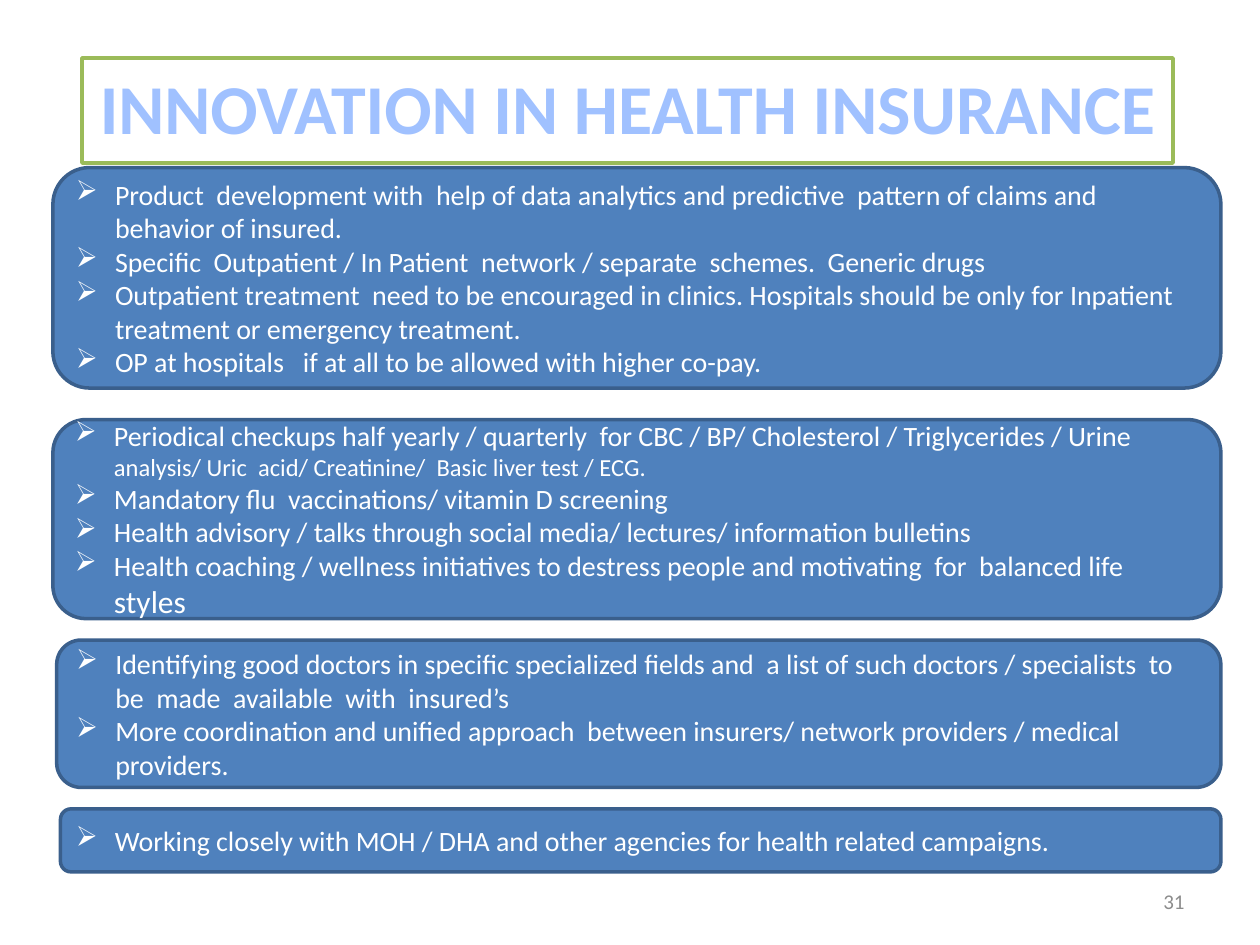
from lxml import etree
from pptx import Presentation
from pptx.dml.color import RGBColor
from pptx.enum import shapes, text
from pptx.oxml.ns import qn

PX = 9144  # EMU per px, 100 px to the inch
PT = 12700

THEME = {
    "font": "Calibri",
    "panel": "4F81BD", "edge": "3A5F8C",
    "box": "FFFFFF", "frame": "9BBB59",
    "title": "A0C1FF", "body": "FFFFFF", "number": "8C8C8C",
    "title_pt": 40, "body_pt": 16, "small_pt": 14, "large_pt": 18,
    "number_pt": 12, "line_pt": 2,
}
INDENT = 31
RIGHT = 969  # shared right edge of the panels

# Each panel: left, top, height, bullets; a bullet is a list of (text, size key)
PANELS = [
    (42, 133, 175, [
        [("Product  development with  help of data analytics and predictive  "
          "pattern of claims and behavior of insured.", "body_pt")],
        [("Specific  Outpatient / In Patient  network / separate  schemes.  "
          "Generic drugs", "body_pt")],
        [("Outpatient treatment  need to be encouraged in clinics. Hospitals "
          "should be only for Inpatient treatment or emergency treatment.",
          "body_pt")],
        [("OP at hospitals   if at all to be allowed with higher co-pay.",
          "body_pt")],
    ]),
    (42, 333, 158, [
        [("Periodical checkups half yearly / quarterly  for CBC / BP/ "
          "Cholesterol / Triglycerides / Urine ", "body_pt"),
         ("analysis/ Uric  acid/ Creatinine/  Basic liver test / ECG.",
          "small_pt")],
        [("Mandatory flu  vaccinations/ vitamin D screening", "body_pt")],
        [("Health advisory / talks through social media/ lectures/ "
          "information bulletins", "body_pt")],
        [("Health coaching / wellness initiatives to destress people and "
          "motivating  for  balanced life ", "body_pt"),
         ("styles", "large_pt")],
    ]),
    (45, 508, 117, [
        [("Identifying good doctors in specific specialized fields and  a list "
          "of such doctors / specialists  to be  made  available  with  "
          "insured’s", "body_pt")],
        [("More coordination and unified approach  between insurers/ network "
          "providers / medical providers.", "body_pt")],
    ]),
    (48, 642, 50, [
        [("Working closely with MOH / DHA and other agencies for health "
          "related campaigns.", "body_pt")],
    ]),
]


def assign(obj, values):
    for name, value in values.items():
        setattr(obj, name, value)


def place(left, top, width, height):
    return dict(left=left * PX, top=top * PX,
                width=width * PX, height=height * PX)


def paint(shape, fill, line):
    shape.fill.solid()
    shape.fill.fore_color.rgb = RGBColor.from_string(THEME[fill])
    shape.line.color.rgb = RGBColor.from_string(THEME[line])
    shape.line.width = THEME["line_pt"] * PT


def write(para, words, size, color, bold=False):
    run = para.add_run()
    run.text = words
    assign(run.font, dict(name=THEME["font"], size=THEME[size] * PT, bold=bold))
    run.font.color.rgb = RGBColor.from_string(THEME[color])


def bullet(para):
    props = para._p.get_or_add_pPr()
    props.set("marL", str(INDENT * PX))
    props.set("indent", str(-INDENT * PX))
    etree.SubElement(props, qn("a:buChar")).set("char", "➢")


def add_title(slide, words):
    title = slide.shapes.title
    assign(title, place(65, 46, 866, 77))
    paint(title, "box", "frame")
    frame = title.text_frame
    assign(frame, dict(word_wrap=False, vertical_anchor=text.MSO_ANCHOR.TOP,
                       auto_size=text.MSO_AUTO_SIZE.SHAPE_TO_FIT_TEXT))
    para = frame.paragraphs[0]
    para.alignment = text.PP_ALIGN.CENTER
    write(para, words, "title_pt", "title", bold=True)


def add_panel(slide, left, top, height, bullets):
    box = place(left, top, RIGHT - left, height)
    panel = slide.shapes.add_shape(
        shapes.MSO_SHAPE.ROUNDED_RECTANGLE, *box.values())
    panel.shadow.inherit = False
    paint(panel, "panel", "edge")
    frame = panel.text_frame
    assign(frame, dict(word_wrap=True, vertical_anchor=text.MSO_ANCHOR.MIDDLE))
    for i, runs in enumerate(bullets):
        para = frame.add_paragraph() if i else frame.paragraphs[0]
        para.alignment = text.PP_ALIGN.LEFT
        bullet(para)
        for words, size in runs:
            write(para, words, size, "body")


def add_number(slide, words):
    box = slide.shapes.add_textbox(*place(717, 695, 233, 40).values())
    frame = box.text_frame
    assign(frame, dict(word_wrap=True, vertical_anchor=text.MSO_ANCHOR.MIDDLE))
    para = frame.paragraphs[0]
    para.alignment = text.PP_ALIGN.RIGHT
    write(para, words, "number_pt", "number")


def main():
    deck = Presentation()
    assign(deck, dict(slide_width=1000 * PX, slide_height=750 * PX))
    slide = deck.slides.add_slide(deck.slide_layouts[5])  # title only
    add_number(slide, "31")
    add_title(slide, "INNOVATION IN HEALTH INSURANCE")
    for panel in PANELS:
        add_panel(slide, *panel)
    deck.save("out.pptx")


if __name__ == "__main__":
    main()
